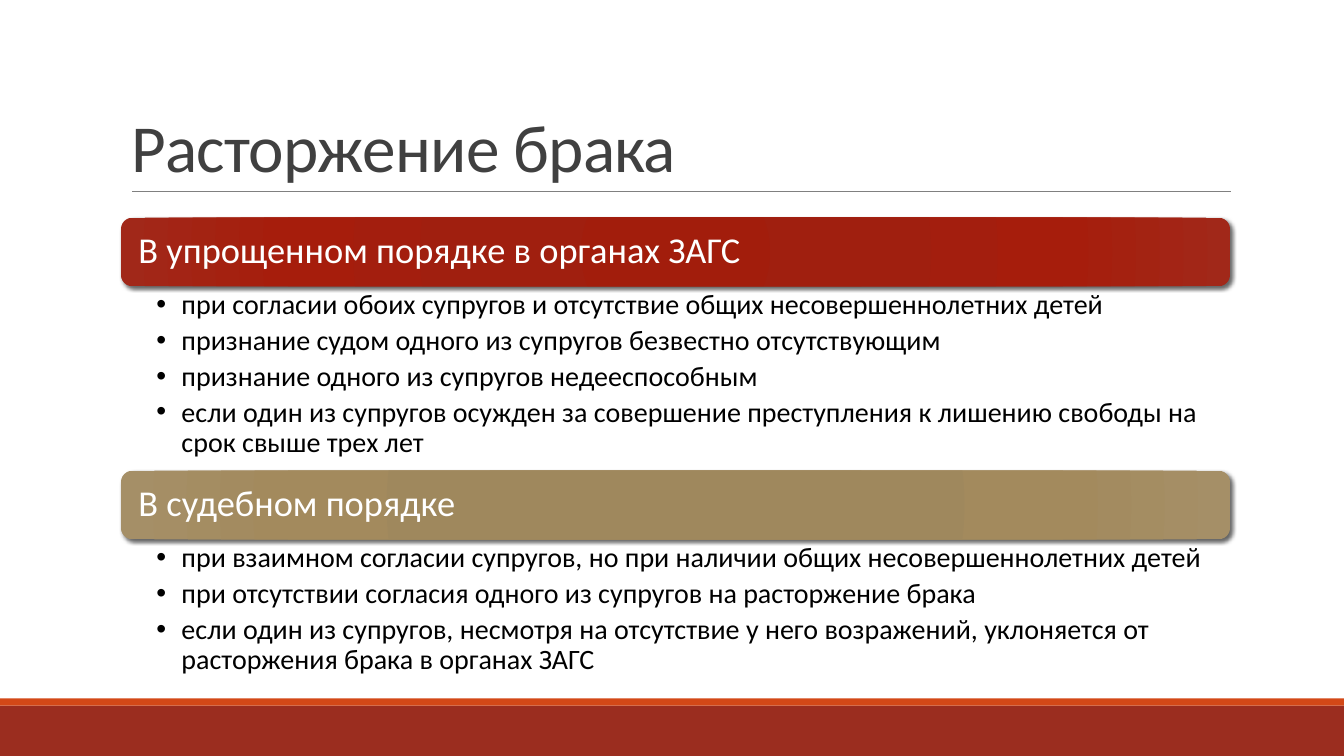
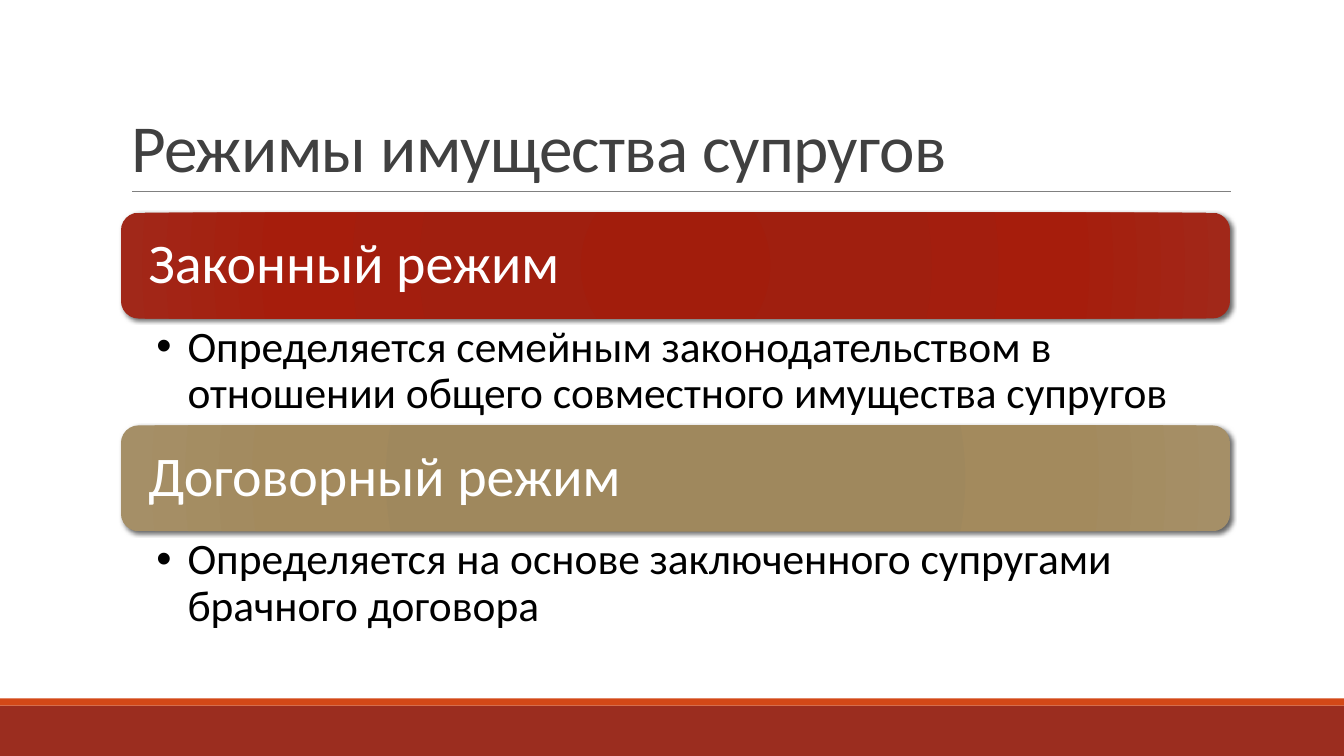
from dataclasses import dataclass

from pptx import Presentation
from pptx.dml.color import RGBColor
from pptx.enum.shapes import MSO_CONNECTOR, MSO_SHAPE
from pptx.enum.text import MSO_ANCHOR, MSO_AUTO_SIZE, PP_ALIGN
from pptx.oxml import parse_xml
from pptx.oxml.ns import nsdecls
from pptx.util import Inches, Pt

RECTANGLE = MSO_SHAPE.RECTANGLE
ROUNDED = MSO_SHAPE.ROUNDED_RECTANGLE
STRAIGHT = MSO_CONNECTOR.STRAIGHT
LEFT = PP_ALIGN.LEFT
TOP, MIDDLE, BOTTOM = MSO_ANCHOR.TOP, MSO_ANCHOR.MIDDLE, MSO_ANCHOR.BOTTOM
NO_AUTOFIT = MSO_AUTO_SIZE.NONE

# Shared look
FONT = "Calibri"
BLACK = RGBColor(0x00, 0x00, 0x00)
WHITE = RGBColor(0xFF, 0xFF, 0xFF)
TITLE_GREY = RGBColor(0x40, 0x40, 0x40)
RULE_GREY = RGBColor(0x80, 0x80, 0x80)
FOOTER_RED = RGBColor(0x9B, 0x2D, 0x1F)
FOOTER_ORANGE = RGBColor(0xD3, 0x48, 0x17)
RED_STOPS = [(0, RGBColor(0xA2, 0x1D, 0x0C)), (34, RGBColor(0xA0, 0x1F, 0x0F)),
             (70, RGBColor(0xA6, 0x1D, 0x0C)), (100, RGBColor(0xA1, 0x28, 0x19))]
TAN_STOPS = [(0, RGBColor(0x9F, 0x87, 0x5B)), (34, RGBColor(0x9F, 0x88, 0x5D)),
             (70, RGBColor(0xA3, 0x8A, 0x5D)), (100, RGBColor(0xA5, 0x8F, 0x67))]

SLIDE_WIDTH, SLIDE_HEIGHT = Inches(13.33), Inches(7.5)
CONTENT_LEFT, CONTENT_WIDTH = Inches(1.2), Inches(11)


@dataclass
class ListStyle:
    """Sizes that differ from slide to slide: inches, and points for text."""
    top: float
    bar_height: float
    bar_inset: float
    bar_size: int
    list_size: int
    indent: float
    list_inset: float
    right_inset: float


COMPACT = ListStyle(2.16, 0.68, 0.14, 26, 20, 0.25, 0.04, 0.2)
LARGE = ListStyle(2.11, 1.05, 0.22, 40, 31, 0.31, 0.06, 0.31)

# Title, style, then (heading, list height, list items) for each section
SLIDES = [
    ("Расторжение брака", COMPACT, [
        ("В упрощенном порядке в органах ЗАГС", 1.83, [
            "при согласии обоих супругов и отсутствие общих несовершеннолетних детей",
            "признание судом одного из супругов безвестно отсутствующим",
            "признание одного из супругов недееспособным",
            "если один из супругов осужден за совершение преступления к лишению "
            "свободы на срок свыше трех лет",
        ]),
        ("В судебном порядке", 1.44, [
            "при взаимном согласии супругов, но при наличии общих несовершеннолетних детей",
            "при отсутствии согласия одного из супругов на расторжение брака",
            "если один из супругов, несмотря на отсутствие у него возражений, "
            "уклоняется от расторжения брака в органах ЗАГС",
        ]),
    ]),
    ("Режимы имущества супругов", LARGE, [
        ("Законный режим", 1.06, [
            "Определяется семейным законодательством в отношении общего "
            "совместного имущества супругов",
        ]),
        ("Договорный режим", 1.06, [
            "Определяется на основе заключенного супругами брачного договора",
        ]),
    ]),
]


def place(shape, left, top, width, height):
    shape.left, shape.top, shape.width, shape.height = left, top, width, height


def add_run(paragraph, text, size, color):
    run = paragraph.add_run()
    run.text = text
    run.font.name = FONT
    run.font.size = Pt(size)
    run.font.color.rgb = color
    return run


def set_frame(frame, anchor, left, top, right, bottom):
    frame.word_wrap = True
    frame.auto_size = NO_AUTOFIT
    frame.vertical_anchor = anchor
    frame.margin_left, frame.margin_right = Inches(left), Inches(right)
    frame.margin_top, frame.margin_bottom = Inches(top), Inches(bottom)


# Layout parts
def add_band(slide, top, height, color):
    band = slide.shapes.add_shape(RECTANGLE, 0, Inches(top), SLIDE_WIDTH, Inches(height))
    band.shadow.inherit = False
    band.fill.solid()
    band.fill.fore_color.rgb = color
    band.line.fill.background()
    return band


def add_title_rule(slide):
    rule = slide.shapes.add_connector(
        STRAIGHT, Inches(1.31), Inches(1.9), Inches(12.21), Inches(1.9))
    rule.line.color.rgb = RULE_GREY
    rule.line.width = Pt(0.5)
    rule.element.spPr.append(parse_xml(f"<a:effectLst {nsdecls('a')}/>"))
    return rule


def prepare_layout(layout):
    for placeholder in list(layout.placeholders):
        if placeholder.placeholder_format.idx >= 10:
            placeholder.element.getparent().remove(placeholder.element)
    title = layout.placeholders[0]
    place(title, CONTENT_LEFT, Inches(0.31), CONTENT_WIDTH, Inches(1.59))
    set_frame(title.text_frame, BOTTOM, 0.1, 0.05, 0.1, 0.05)


def decorate_layout(layout, slide):
    """Draw the shared parts on a slide, then move them to its layout."""
    parts = [add_band(slide, 7, 0.5, FOOTER_RED),
             add_band(slide, 6.93, 0.07, FOOTER_ORANGE),
             add_title_rule(slide)]
    for part in parts:
        layout.shapes.element.append(part.element)


# Slide parts
def fill_title(title, text):
    paragraph = title.text_frame.paragraphs[0]
    paragraph.alignment = LEFT
    paragraph.line_spacing = 0.85
    run = add_run(paragraph, text, 48, TITLE_GREY)
    run.font._element.set("spc", "-50")


def set_gradient_and_shadow(shape, stops):
    stop_xml = "".join(
        f'<a:gs pos="{position * 1000}"><a:srgbClr val="{color}"/></a:gs>'
        for position, color in stops)
    properties = shape.element.spPr
    properties.insert(2, parse_xml(
        f'<a:gradFill {nsdecls("a")} rotWithShape="1"><a:gsLst>{stop_xml}</a:gsLst>'
        '<a:path path="circle"><a:fillToRect l="100000" t="100000" r="100000" '
        'b="100000"/></a:path></a:gradFill>'))
    properties.append(parse_xml(
        f'<a:effectLst {nsdecls("a")}><a:outerShdw blurRad="{Pt(3)}" dist="{Pt(2)}" '
        'dir="2700000" algn="ctr" rotWithShape="0"><a:srgbClr val="000000">'
        '<a:alpha val="60000"/></a:srgbClr></a:outerShdw></a:effectLst>'))


def add_heading_bar(slide, text, top, style, stops):
    bar = slide.shapes.add_shape(
        ROUNDED, CONTENT_LEFT, Inches(top), CONTENT_WIDTH, Inches(style.bar_height))
    bar.line.fill.background()
    set_gradient_and_shadow(bar, stops)
    inset = style.bar_inset
    set_frame(bar.text_frame, MIDDLE, inset, inset, inset, inset)
    paragraph = bar.text_frame.paragraphs[0]
    paragraph.alignment = LEFT
    paragraph.line_spacing = 0.9
    add_run(paragraph, text, style.bar_size, WHITE)


def fill_list(body, items, top, height, style):
    place(body, CONTENT_LEFT, Inches(top), CONTENT_WIDTH, Inches(height))
    frame = body.text_frame
    set_frame(frame, TOP, 0.35, style.list_inset, style.right_inset, style.list_inset)
    for index, item in enumerate(items):
        paragraph = frame.add_paragraph() if index else frame.paragraphs[0]
        paragraph.level = 1
        properties = paragraph._p.get_or_add_pPr()
        properties.set("marL", str(Inches(style.indent)))
        properties.set("indent", str(-Inches(style.indent)))
        properties.append(parse_xml(f'<a:buChar {nsdecls("a")} char="•"/>'))
        paragraph.alignment = LEFT
        paragraph.line_spacing = 0.9
        paragraph.space_before = Pt(0)
        paragraph.space_after = Pt(style.list_size * 0.2)
        add_run(paragraph, item, style.list_size, BLACK)


def fill_slide(slide, title, style, sections):
    fill_title(slide.shapes.title, title)
    bodies = [slide.placeholders[1], slide.placeholders[2]]
    top = style.top
    for body, stops, section in zip(bodies, (RED_STOPS, TAN_STOPS), sections):
        heading, list_height, items = section
        add_heading_bar(slide, heading, top, style, stops)
        top += style.bar_height
        fill_list(body, items, top, list_height, style)
        top += list_height


def main():
    presentation = Presentation()
    presentation.slide_width, presentation.slide_height = SLIDE_WIDTH, SLIDE_HEIGHT
    layout = presentation.slide_layouts.get_by_name("Two Content")
    prepare_layout(layout)
    slides = [presentation.slides.add_slide(layout) for _ in SLIDES]
    decorate_layout(layout, slides[0])
    for slide, content in zip(slides, SLIDES):
        fill_slide(slide, *content)
    presentation.save("out.pptx")


if __name__ == "__main__":
    main()
